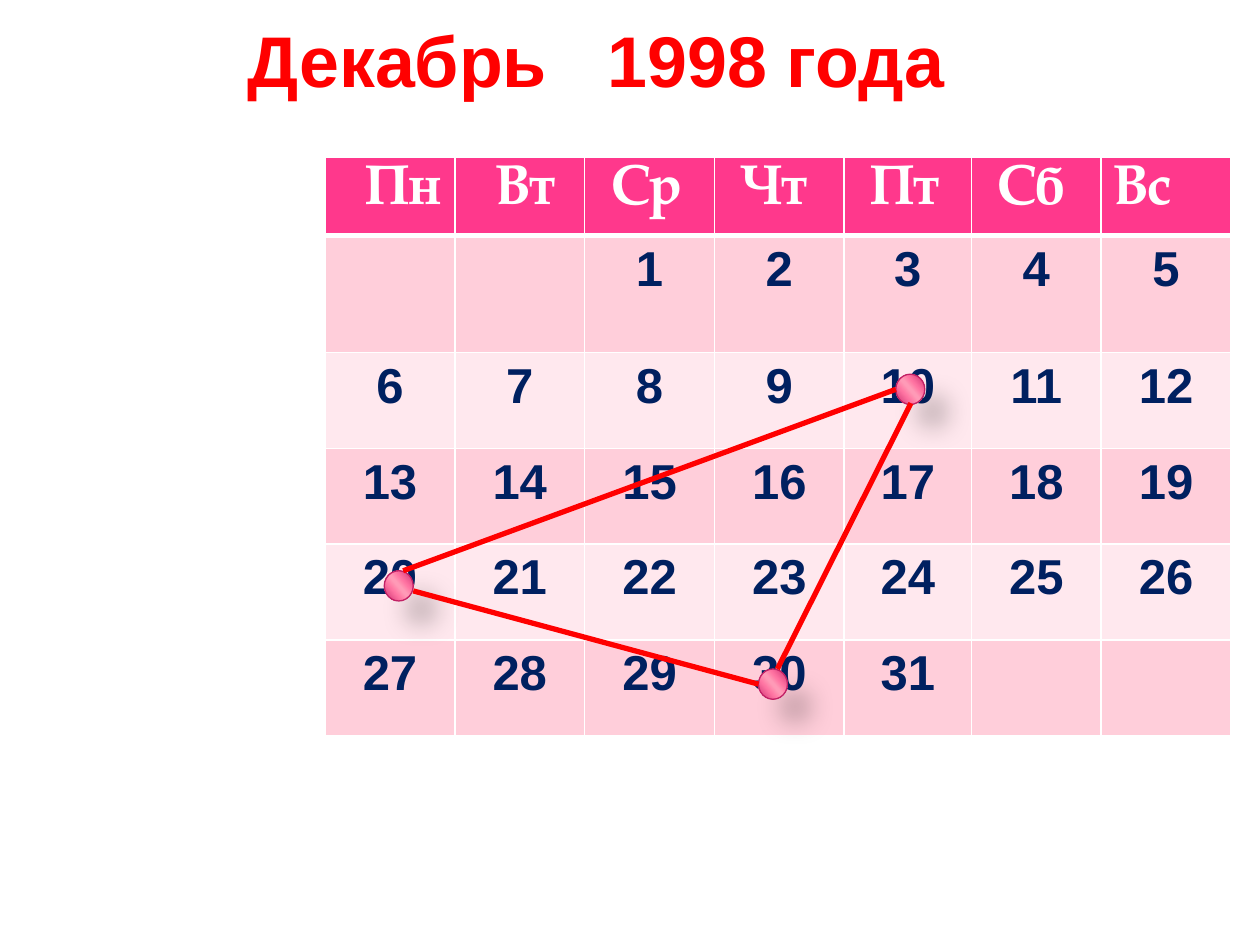
from lxml.etree import SubElement
from pptx import Presentation
from pptx.dml.color import RGBColor
from pptx.enum.shapes import MSO_CONNECTOR, MSO_SHAPE
from pptx.enum.text import MSO_ANCHOR, PP_ALIGN
from pptx.oxml import parse_xml
from pptx.oxml.ns import nsdecls, qn
from pptx.util import Inches, Pt

RED = RGBColor(0xFF, 0x00, 0x00)
NAVY = RGBColor(0x00, 0x20, 0x60)
WHITE = RGBColor(0xFF, 0xFF, 0xFF)
HEADER_PINK = RGBColor(0xFF, 0x38, 0x8C)
ODD_PINK = RGBColor(0xFF, 0xCE, 0xDA)
EVEN_PINK = RGBColor(0xFF, 0xE8, 0xEE)
MARKER_EDGE = RGBColor(0xC1, 0x21, 0x65)
MARKER_STOPS = [(0, "CC2D70"), (33, "FF73A2"), (47, "FF9AB7"),
                (53, "FF9AB7"), (68, "FF75A3"), (100, "CC2D70")]

BODY_FONT = "Arial"
HEADER_FONT = "TeX Gyre Pagella"

# Weekday and the left margin of its cell
WEEKDAYS = [("Пн", 0.32), ("Вт", 0.32), ("Ср", 0.21), ("Чт", 0.21),
            ("Пт", 0.21), ("Сб", 0.21), ("Вс", 0.1)]
FIRST_WEEKDAY = 2
DAYS_IN_MONTH = 31
COLUMN_WIDTHS = [1.03] * 4 + [1.01] + [1.03] * 2
ROW_HEIGHTS = [0.62, 0.93] + [0.76] * 4

MARKER_SIZE = (0.23, 0.24)
MARKERS = [(3.05, 4.53), (7.11, 2.97), (6.02, 5.31)]
TRIANGLE_SIDES = [((3.28, 4.69), (6.02, 5.43)),
                  ((6.17, 5.31), (7.23, 3.2)),
                  ((3.2, 4.53), (7.11, 3.09))]


def style_run(run, font_name, size, color):
    run.font.name = font_name
    run.font.size = Pt(size)
    run.font.bold = True
    run.font.color.rgb = color


def add_title(slide, left, top, width, height):
    title = slide.shapes.title
    title.left, title.top = Inches(left), Inches(top)
    title.width, title.height = Inches(width), Inches(height)
    title.text_frame.vertical_anchor = MSO_ANCHOR.MIDDLE
    heading = title.text_frame.paragraphs[0]
    heading.alignment = PP_ALIGN.CENTER
    for words in ("Декабрь", " ", "1998 года"):
        run = heading.add_run()
        run.text = words
        style_run(run, BODY_FONT, 41, RED)
    # Widen the gap between month and year by letter spacing
    month_gap = heading.runs[1]
    month_gap.font._element.set("spc", "2280")


def set_borders(cell, **widths):
    """Draw white cell borders; keys are L, R, T and B, values are points."""
    properties = cell._tc.get_or_add_tcPr()
    for index, (side, width) in enumerate(widths.items()):
        properties.insert(index, parse_xml(
            f'<a:ln{side} {nsdecls("a")} w="{Pt(width)}"><a:solidFill>'
            f'<a:srgbClr val="{WHITE}"/></a:solidFill></a:ln{side}>'))


def fill_cell(cell, color, row):
    cell.fill.solid()
    cell.fill.fore_color.rgb = color
    set_borders(cell, L=1, R=1, T=3 if row == 1 else 1, B=3 if row == 0 else 1)


def add_calendar(slide, left, top, width, height):
    table = slide.shapes.add_table(
        len(ROW_HEIGHTS), len(WEEKDAYS), Inches(left), Inches(top),
        Inches(width), Inches(height)).table
    for column, column_width in zip(table.columns, COLUMN_WIDTHS):
        column.width = Inches(column_width)
    for row, row_height in zip(table.rows, ROW_HEIGHTS):
        row.height = Inches(row_height)

    for column, (weekday, margin) in enumerate(WEEKDAYS):
        cell = table.cell(0, column)
        cell.text_frame.text = weekday
        cell.margin_left = Inches(margin)
        cell.margin_right = 0
        style_run(cell.text_frame.paragraphs[0].runs[0], HEADER_FONT, 32, WHITE)
        fill_cell(cell, HEADER_PINK, 0)

    for week in range(1, len(ROW_HEIGHTS)):
        for column in range(len(WEEKDAYS)):
            cell = table.cell(week, column)
            fill_cell(cell, ODD_PINK if week % 2 else EVEN_PINK, week)
            day = (week - 1) * len(WEEKDAYS) + column - FIRST_WEEKDAY + 1
            if 1 <= day <= DAYS_IN_MONTH:
                cell.text_frame.text = str(day)
                paragraph = cell.text_frame.paragraphs[0]
                paragraph.alignment = PP_ALIGN.CENTER
                style_run(paragraph.runs[0], BODY_FONT, 28, NAVY)


def add_marker(slide, left, top, width, height):
    """Add a glossy round marker with a soft shadow."""
    marker = slide.shapes.add_shape(
        MSO_SHAPE.FLOWCHART_CONNECTOR, Inches(left), Inches(top),
        Inches(width), Inches(height))
    marker.line.color.rgb = MARKER_EDGE
    marker.line.width = Pt(0.75)
    marker.shadow.inherit = False
    stops = "".join(f'<a:gs pos="{position * 1000}"><a:srgbClr val="{color}"/></a:gs>'
                    for position, color in MARKER_STOPS)
    properties = marker._element.spPr
    properties.find(qn("a:prstGeom")).addnext(parse_xml(
        f'<a:gradFill {nsdecls("a")} rotWithShape="1"><a:gsLst>{stops}</a:gsLst>'
        f'<a:lin ang="{139 * 60000}" scaled="0"/></a:gradFill>'))
    properties.find(qn("a:effectLst")).append(parse_xml(
        f'<a:outerShdw {nsdecls("a")} blurRad="{Pt(15)}" dist="{Pt(18)}" '
        f'dir="{45 * 60000}" algn="tl" rotWithShape="0"><a:srgbClr val="000000">'
        f'<a:alpha val="26000"/></a:srgbClr></a:outerShdw>'))


def add_triangle_side(slide, start, end):
    side = slide.shapes.add_connector(
        MSO_CONNECTOR.STRAIGHT, *(Inches(value) for value in start + end))
    side.line.color.rgb = RED
    side.line.width = Pt(3)
    SubElement(side._element.spPr, qn("a:effectLst"))


def main():
    presentation = Presentation()
    presentation.slide_width = Inches(10)
    presentation.slide_height = Inches(7.5)
    slide = presentation.slides.add_slide(presentation.slide_layouts[5])
    add_title(slide, 0.23, 0, 9, 0.94)
    add_calendar(slide, 2.58, 1.25, sum(COLUMN_WIDTHS), sum(ROW_HEIGHTS))
    for position in MARKERS:
        add_marker(slide, *position, *MARKER_SIZE)
    for start, end in TRIANGLE_SIDES:
        add_triangle_side(slide, start, end)
    presentation.save("out.pptx")


if __name__ == "__main__":
    main()
